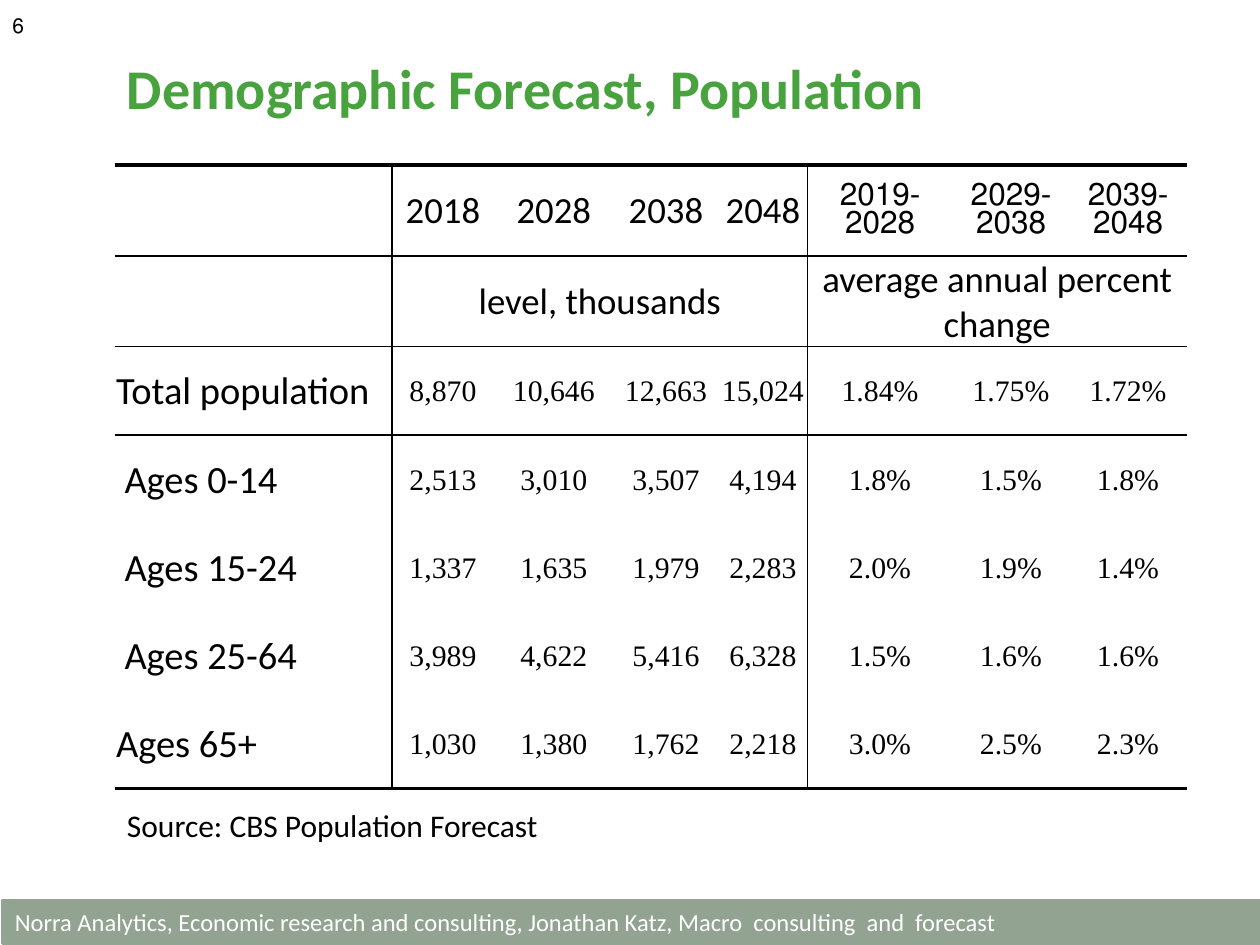
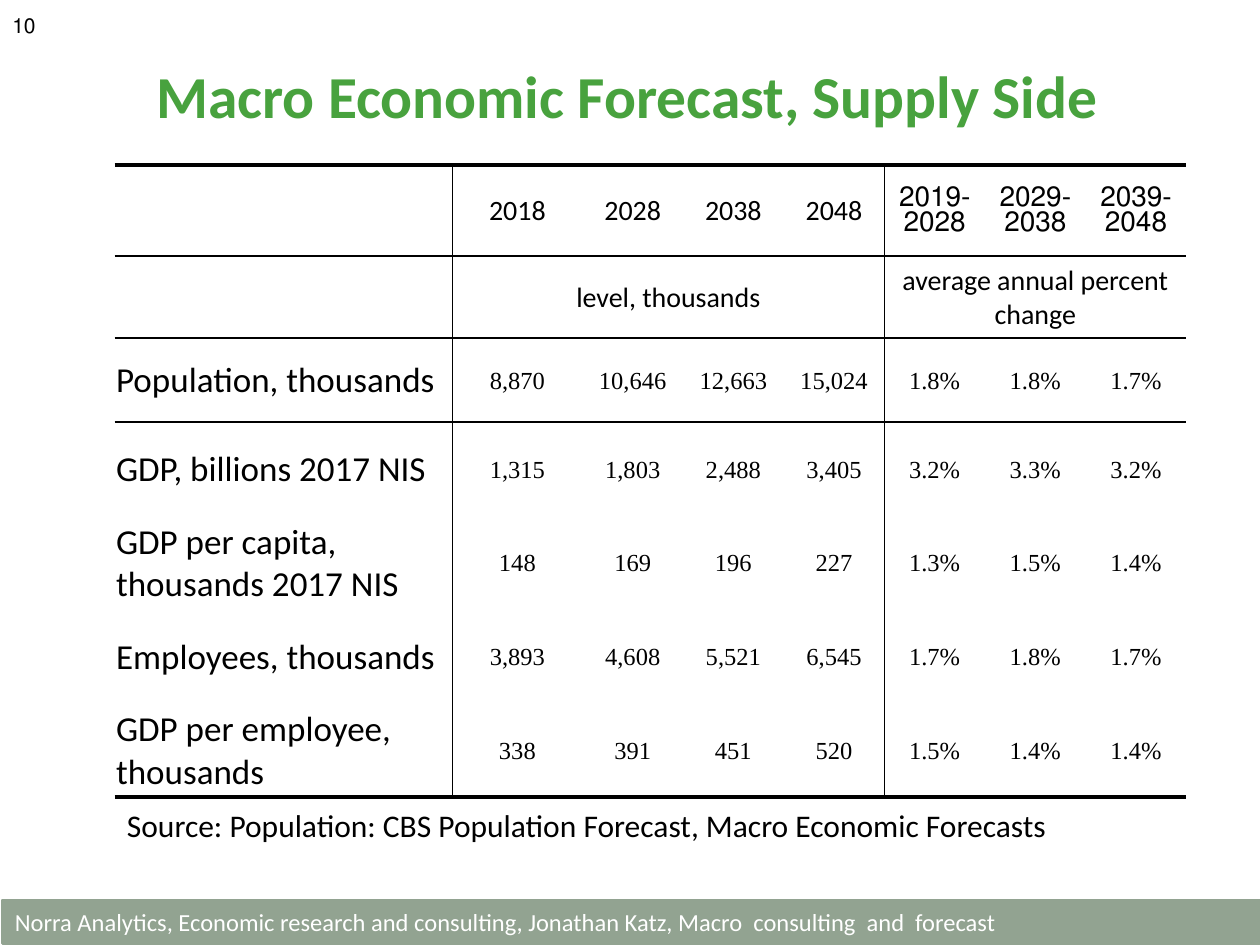
from collections import namedtuple
from dataclasses import dataclass

from lxml.etree import SubElement
from pptx import Presentation
from pptx.dml.color import RGBColor
from pptx.enum.shapes import MSO_SHAPE
from pptx.enum.text import MSO_ANCHOR, PP_ALIGN
from pptx.oxml.ns import qn
from pptx.util import Cm, Pt

Scale = namedtuple("Scale", "title head period label figure")


@dataclass(frozen=True)
class Theme:
    green: str = "48A23E"
    sage: str = "92A391"
    black: str = "000000"
    white: str = "FFFFFF"
    sans: str = "Calibri"
    serif: str = "Times New Roman"
    number: int = 12
    footer: int = 14
    source: int = 18
    thick: float = 2.25
    thin: float = 1
    large: Scale = Scale(32, 21, 18, 22, 17)
    small: Scale = Scale(34, 16, 16, 20, 14)


THEME = Theme()
FOOTER = ("Norra Analytics, Economic research and consulting, Jonathan Katz, "
          "Macro  consulting  and  forecast")
YEARS = ["2018", "2028", "2038", "2048"]
PERIODS = ["2019-2028", "2029-2038", "2039-2048"]
LEFT = 2.31
SPLIT = 1 + len(YEARS)
PAD = 0.03
INDENT = 0.2

PEOPLE = [
    ["Total population", "8,870", "10,646", "12,663", "15,024", "1.84%", "1.75%", "1.72%"],
    ["Ages 0-14", "2,513", "3,010", "3,507", "4,194", "1.8%", "1.5%", "1.8%"],
    ["Ages 15-24", "1,337", "1,635", "1,979", "2,283", "2.0%", "1.9%", "1.4%"],
    ["Ages 25-64", "3,989", "4,622", "5,416", "6,328", "1.5%", "1.6%", "1.6%"],
    ["Ages 65+", "1,030", "1,380", "1,762", "2,218", "3.0%", "2.5%", "2.3%"],
]
SUPPLY = [
    ["Population, thousands", "8,870", "10,646", "12,663", "15,024", "1.8%", "1.8%", "1.7%"],
    ["GDP, billions 2017 NIS", "1,315", "1,803", "2,488", "3,405", "3.2%", "3.3%", "3.2%"],
    ["GDP per capita, thousands 2017 NIS", "148", "169", "196", "227", "1.3%", "1.5%", "1.4%"],
    ["Employees, thousands", "3,893", "4,608", "5,521", "6,545", "1.7%", "1.8%", "1.7%"],
    ["GDP per employee, thousands", "338", "391", "451", "520", "1.5%", "1.4%", "1.4%"],
]


def write(frame, text, size, color=THEME.black, face=THEME.sans, bold=False,
          align=PP_ALIGN.LEFT, rtl=False):
    frame.text = text
    frame.word_wrap = True
    line = frame.paragraphs[0]
    line.alignment = align
    if rtl:
        line._p.get_or_add_pPr().set("rtl", "1")
    font = line.runs[0].font
    font.size, font.name, font.bold = Pt(size), face, bold
    font.color.rgb = RGBColor.from_string(color)
    return line


def add_text(slide, box, text, size, anchor=MSO_ANCHOR.MIDDLE, **style):
    frame = slide.shapes.add_textbox(*map(Cm, box)).text_frame
    frame.vertical_anchor = anchor
    write(frame, text, size, **style)


def add_footer(slide):
    band = slide.shapes.add_shape(
        MSO_SHAPE.RECTANGLE, Cm(0.05), Cm(18.16), Cm(25.43), Cm(0.86))
    band.shadow.inherit = False
    band.fill.solid()
    band.fill.fore_color.rgb = RGBColor.from_string(THEME.sage)
    band.line.color.rgb = RGBColor.from_string(THEME.sage)
    band.line.width = Pt(2)
    band.text_frame.vertical_anchor = MSO_ANCHOR.MIDDLE
    write(band.text_frame, FOOTER, THEME.footer, THEME.white)


def add_frame(deck, number, title, box, size, source):
    """Add a slide with its footer, title, number and source line."""
    slide = deck.slides.add_slide(deck.slide_layouts[6])
    add_footer(slide)
    add_text(slide, box, title, size, color=THEME.green, bold=True)
    add_text(slide, (0, 0, 5.92, 1.02), number, THEME.number, rtl=True)
    add_text(slide, (LEFT, 16.13, 21.59, 1.02), source, THEME.source,
             anchor=MSO_ANCHOR.TOP)
    return slide


def rule(cell, side, weight):
    """Draw one edge of a cell, or clear it when the weight is 0."""
    edge = SubElement(cell._tc.get_or_add_tcPr(), qn(f"a:ln{side}"),
                      w=str(Pt(weight)))
    if weight:
        fill = SubElement(edge, qn("a:solidFill"))
        SubElement(fill, qn("a:srgbClr"), val=THEME.black)
    else:
        SubElement(edge, qn("a:noFill"))


def style_cells(table):
    last = len(table.rows)
    flat = {0: THEME.thick, 1: THEME.thin, 2: THEME.thin, 3: THEME.thin,
            last: THEME.thick}
    tall = {1: THEME.thin, SPLIT: THEME.thin}
    for r in range(last):
        for c in range(len(table.columns)):
            cell = table.cell(r, c)
            rule(cell, "L", tall.get(c, 0))
            rule(cell, "R", tall.get(c + 1, 0))
            rule(cell, "T", flat.get(r, 0))
            rule(cell, "B", flat.get(r + 1, 0))
            cell.fill.background()
            cell.vertical_anchor = MSO_ANCHOR.MIDDLE
            cell.margin_left = cell.margin_right = cell.margin_top = Cm(PAD)
            cell.margin_bottom = 0


def fill_head(table, scale):
    center = PP_ALIGN.CENTER
    for c, year in enumerate(YEARS, 1):
        write(table.cell(0, c).text_frame, year, scale.head, align=center)
    for c, period in enumerate(PERIODS, SPLIT):
        line = write(table.cell(0, c).text_frame, period, scale.period,
                     align=center, rtl=True)
        line.line_spacing = 0.9
    spans = [(1, SPLIT - 1, "level, thousands"),
             (SPLIT, len(table.columns) - 1, "average annual percent change")]
    for first, last, text in spans:
        cell = table.cell(1, first)
        cell.merge(table.cell(1, last))
        write(cell.text_frame, text, scale.head, align=center)


def add_grid(slide, data, widths, heights, scale, inset=()):
    """Add the forecast table; labels in inset are indented."""
    table = slide.shapes.add_table(
        len(heights), len(widths), Cm(LEFT), Cm(3.33),
        Cm(sum(widths)), Cm(sum(heights))).table
    table.first_row = table.horz_banding = False
    for column, width in zip(table.columns, widths):
        column.width = Cm(width)
    for row, height in zip(table.rows, heights):
        row.height = Cm(height)
    style_cells(table)
    fill_head(table, scale)
    for r, (label, *values) in enumerate(data, 2):
        cell = table.cell(r, 0)
        write(cell.text_frame, label, scale.label)
        if label in inset:
            cell.margin_left = Cm(INDENT)
        for c, value in enumerate(values, 1):
            write(table.cell(r, c).text_frame, value, scale.figure,
                  face=THEME.serif, align=PP_ALIGN.CENTER)


def main():
    deck = Presentation()
    deck.slide_width, deck.slide_height = Cm(25.4), Cm(19.05)

    slide = add_frame(deck, "6", "Demographic Forecast, Population",
                      (LEFT, 0.23, 18.34, 3.05), THEME.large.title,
                      "Source: CBS Population Forecast")
    add_grid(slide, PEOPLE, [5.59, 2.06, 2.41, 2.11, 1.8, 2.92, 2.36, 2.36],
             [1.83, 1.83] + [1.78] * 5, THEME.large,
             inset=("Ages 0-14", "Ages 15-24", "Ages 25-64"))

    slide = add_frame(deck, "10", "Macro Economic Forecast, Supply Side",
                      (2.9, 0.38, 21, 3.05), THEME.small.title,
                      "Source: Population: CBS Population Forecast, "
                      "Macro Economic Forecasts")
    add_grid(slide, SUPPLY, [6.81, 2.62] + [2.03] * 6,
             [1.83, 1.65, 1.7] + [1.89] * 4, THEME.small)

    deck.save("out.pptx")


if __name__ == "__main__":
    main()
